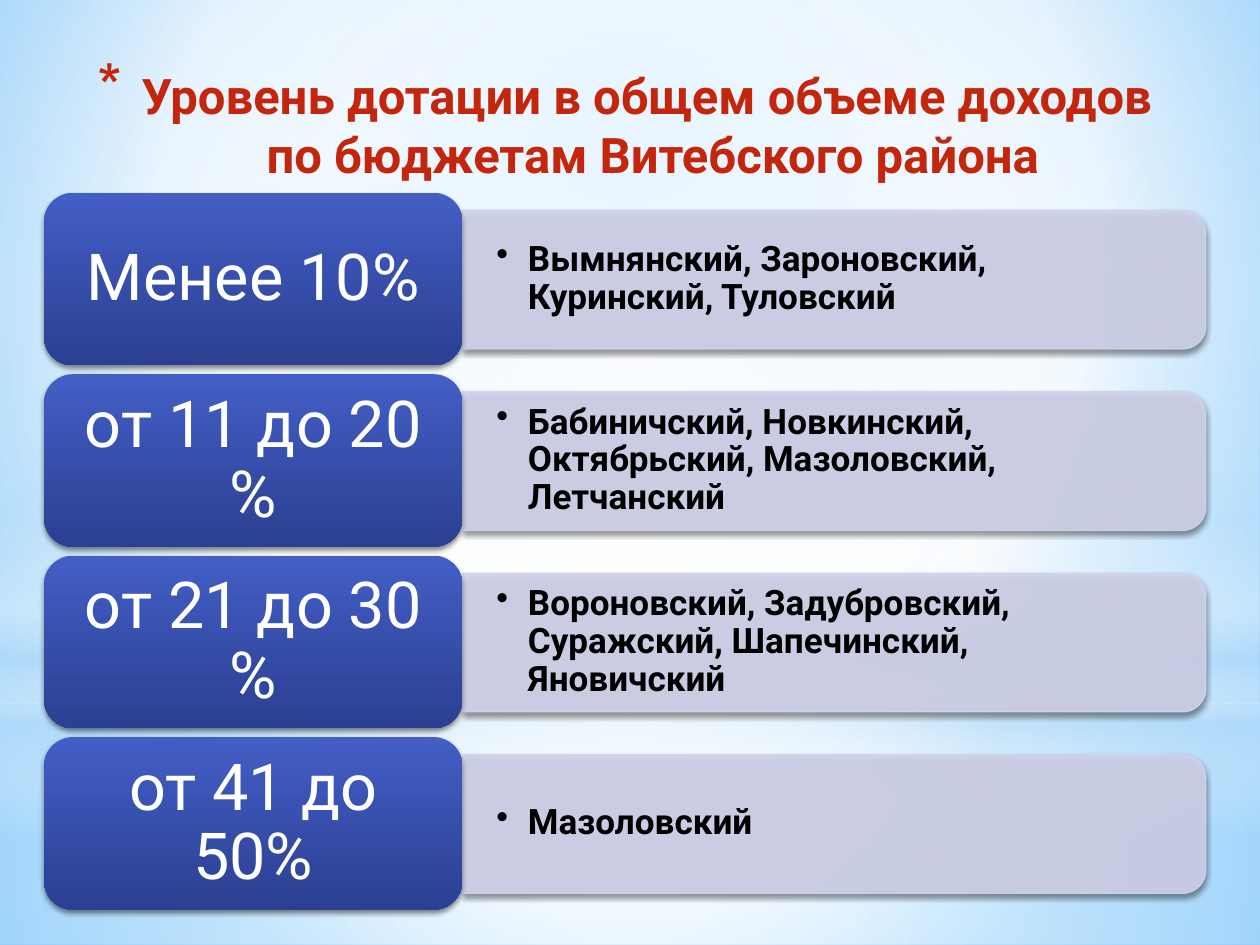
from dataclasses import dataclass
from typing import Optional

import lxml.etree
import pptx
import pptx.dml.color
import pptx.enum.shapes
import pptx.enum.text
import pptx.oxml
import pptx.oxml.ns
import pptx.util

Inches = pptx.util.Inches
Pt = pptx.util.Pt
qn = pptx.oxml.ns.qn
Preset = pptx.enum.shapes.MSO_SHAPE
Anchor = pptx.enum.text.MSO_ANCHOR
Align = pptx.enum.text.PP_ALIGN

FONT = "Roboto"
RED = "C3260C"
PANEL = "D0D3EB"
WHITE = "FFFFFF"
SKY = "B4DCFA"
ROW_PITCH = 1.44


@dataclass
class Box:
    left: float
    top: float
    width: float
    height: float

    def lengths(self) -> list:
        return [Inches(v) for v in (self.left, self.top, self.width, self.height)]


@dataclass
class Gradient:
    """Stops are (position %, colour, opacity %); focus is left, top, right, bottom in %."""
    stops: list
    focus: Optional[tuple] = None


@dataclass
class TextStyle:
    size: float
    color: str
    bold: bool = False
    align: Align = Align.LEFT
    anchor: Anchor = Anchor.MIDDLE
    inset: tuple = (0.1, 0.05)
    line_spacing: float = 1.0
    bullet: str = ""
    bullet_size: int = 100
    indent: float = 0


@dataclass
class Band:
    share: str
    councils: str


CENTER = (50, 50, 50, 50)
BACKGROUND = Gradient([(0, "9ED5FF", 100), (60, WHITE, 100), (100, "5BB9FF", 100)],
                      (20, 10, 20, 60))
LABEL_FILL = Gradient([(0, "435EC5", 100), (100, "2B4092", 100)])
BACKDROP = [
    (Preset.RECTANGLE, Box(0, 5.58, 10, 1.92),
     Gradient([(0, WHITE, 91), (37, WHITE, 76), (100, SKY, 79)], CENTER)),
    (Preset.RECTANGLE, Box(0, 0, 10, 5.58),
     Gradient([(0, WHITE, 89), (48, WHITE, 62), (100, SKY, 79)], CENTER)),
    (Preset.RECTANGLE, Box(0, 4.12, 10, 2.5),
     Gradient([(0, WHITE, 0), (29, WHITE, 30), (45, SKY, 40),
               (55, WHITE, 26), (65, SKY, 60), (100, WHITE, 0)])),
    (Preset.OVAL, Box(0, 1.75, 10, 5.58),
     Gradient([(0, WHITE, 100), (56, WHITE, 0)], CENTER)),
]
TITLE_STYLE = TextStyle(28, RED, True, Align.CENTER, Anchor.TOP, (0.1, 0.08),
                        bullet="*", bullet_size=128, indent=0.35)
LABEL_STYLE = TextStyle(37, WHITE, align=Align.CENTER, inset=(0.15, 0.08), line_spacing=0.9)
COUNCIL_STYLE = TextStyle(20, "000000", True, inset=(0.27, 0.14), line_spacing=0.9,
                          bullet="•", indent=0.25)
BANDS = [
    Band("Менее 10%", "Вымнянский, Зароновский, Куринский, Туловский"),
    Band("от 11 до 20 %", "Бабиничский, Новкинский, Октябрьский, Мазоловский, Летчанский"),
    Band("от 21 до 30 %", "Вороновский, Задубровский, Суражский, Шапечинский, Яновичский"),
    Band("от 41 до 50%", "Мазоловский"),
]


def rgb(color: str) -> pptx.dml.color.RGBColor:
    return pptx.dml.color.RGBColor.from_string(color)


def add_child(parent, tag: str, **attributes):
    return lxml.etree.SubElement(parent, qn(tag), {k: str(v) for k, v in attributes.items()})


def set_gradient(fill, owner, gradient: Gradient) -> None:
    """Give the fill of the owner element the stops and direction of the gradient."""
    fill.gradient()
    grad_fill = owner.find(".//" + qn("a:gradFill"))
    for child in list(grad_fill):
        grad_fill.remove(child)
    stops = add_child(grad_fill, "a:gsLst")
    for position, color, opacity in gradient.stops:
        stop = add_child(stops, "a:gs", pos=position * 1000)
        tint = add_child(stop, "a:srgbClr", val=color)
        if opacity < 100:
            add_child(tint, "a:alpha", val=opacity * 1000)
    if gradient.focus:
        route = add_child(grad_fill, "a:path", path="circle")
        sides = {side: v * 1000 for side, v in zip("ltrb", gradient.focus)}
        add_child(route, "a:fillToRect", **sides)
    else:
        add_child(grad_fill, "a:lin", ang=90 * 60000, scaled=0)


def add_plain_shape(shapes, preset: Preset, box: Box, gradient: Optional[Gradient] = None):
    shape = shapes.add_shape(preset, *box.lengths())
    shape.shadow.inherit = False
    shape.line.fill.background()
    if gradient:
        set_gradient(shape.fill, shape.element, gradient)
    return shape


def add_soft_shadow(shape) -> None:
    effects = shape.element.spPr.find(qn("a:effectLst"))
    shadow = add_child(effects, "a:outerShdw", blurRad=Pt(3.1), dist=Pt(1.8),
                       dir=90 * 60000, rotWithShape=0)
    add_child(add_child(shadow, "a:srgbClr", val="000000"), "a:alpha", val=45000)


def add_text(shapes, box: Box, text: str, style: TextStyle) -> None:
    frame = shapes.add_textbox(*box.lengths()).text_frame
    frame.word_wrap = True
    frame.vertical_anchor = style.anchor
    frame.margin_left = frame.margin_right = Inches(style.inset[0])
    frame.margin_top = frame.margin_bottom = Inches(style.inset[1])
    paragraph = frame.paragraphs[0]
    paragraph.text = text
    paragraph.alignment = style.align
    paragraph.line_spacing = style.line_spacing
    for run in paragraph.runs:
        run.font.name = FONT
        run.font.size = Pt(style.size)
        run.font.bold = style.bold
        run.font.color.rgb = rgb(style.color)
    if style.bullet:
        properties = paragraph._p.get_or_add_pPr()
        properties.set("marL", str(Inches(style.indent)))
        properties.set("indent", str(-Inches(style.indent)))
        add_child(add_child(properties, "a:buClr"), "a:srgbClr", val=style.color)
        add_child(properties, "a:buSzPct", val=style.bullet_size * 1000)
        add_child(properties, "a:buChar", char=style.bullet)


def add_band(shapes, band: Band, offset: float) -> None:
    """Draw one row: the councils on a pale panel and the share on a blue label."""
    panel = add_plain_shape(shapes, Preset.ROUND_2_SAME_RECTANGLE,
                            Box(6.07, offset - 0.73, 1.1, 5.9))
    panel.rotation = 90
    for fill in (panel.fill, panel.line.fill):
        fill.solid()
        fill.fore_color.rgb = rgb(PANEL)
    panel.line.width = Pt(0.75)
    for tint in panel.element.spPr.iter(qn("a:srgbClr")):
        add_child(tint, "a:alpha", val=90000)
    add_soft_shadow(panel)
    add_text(shapes, Box(3.67, offset + 1.72, 5.84, 0.99), band.councils, COUNCIL_STYLE)

    label = add_plain_shape(shapes, Preset.ROUNDED_RECTANGLE,
                            Box(0.35, offset + 1.53, 3.32, 1.37), LABEL_FILL)
    add_soft_shadow(label)
    add_text(shapes, Box(0.42, offset + 1.6, 3.18, 1.24), band.share, LABEL_STYLE)


def main() -> None:
    deck = pptx.Presentation()
    deck.slide_width, deck.slide_height = Inches(10), Inches(7.5)
    slide = deck.slides.add_slide(deck.slide_layouts[6])
    set_gradient(slide.background.fill, slide.element, BACKGROUND)
    for preset, box, gradient in BACKDROP:
        add_plain_shape(slide.shapes, preset, box, gradient)
    add_text(slide.shapes, Box(0.2, 0.44, 9.61, 0.94),
             "Уровень дотации в общем объеме доходов \vпо бюджетам Витебского района",
             TITLE_STYLE)
    diagram = slide.shapes.add_group_shape()
    for row, band in enumerate(BANDS):
        add_band(diagram.shapes, band, row * ROW_PITCH)
    deck.save("out.pptx")


if __name__ == "__main__":
    main()
